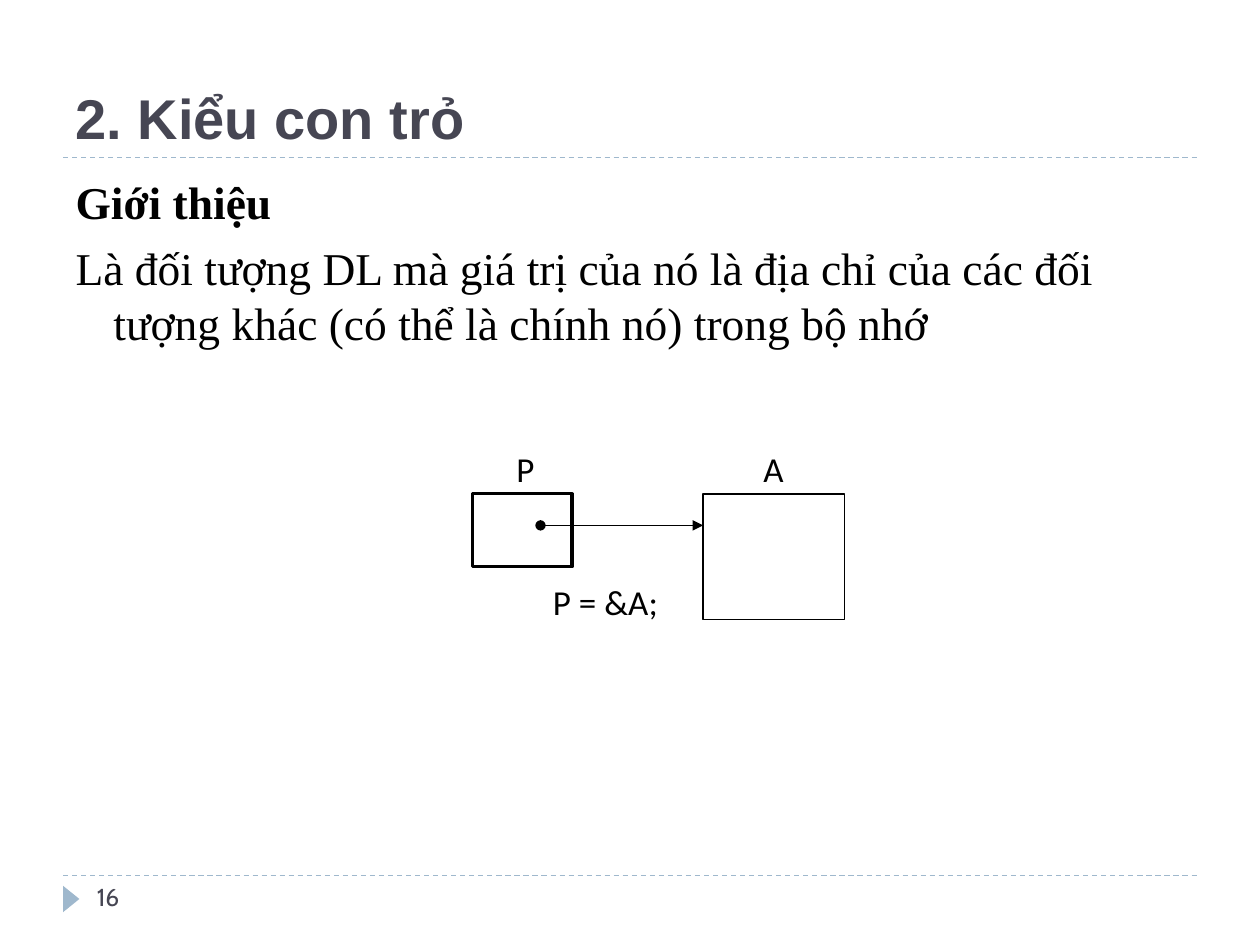
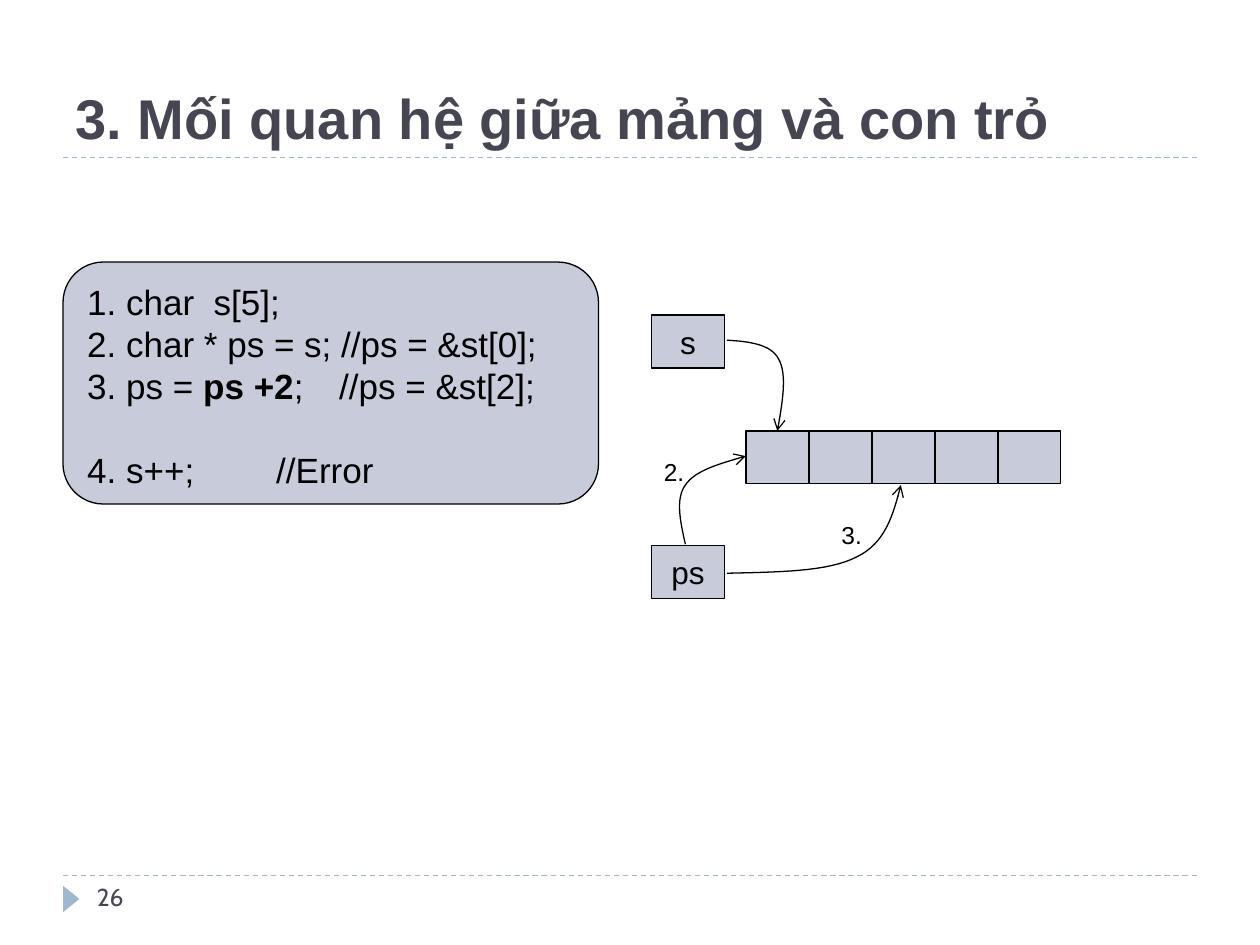
"""Build two slides on pointers and arrays."""
from pptx import Presentation
from pptx.dml.color import RGBColor
from pptx.enum.dml import MSO_LINE
from pptx.enum.shapes import MSO_CONNECTOR, MSO_SHAPE
from pptx.enum.text import MSO_ANCHOR, PP_ALIGN
from pptx.oxml.ns import qn
from pptx.util import Inches, Pt
from lxml.etree import SubElement

BLACK, WHITE, SLATE, BLUE, LILAC = "000000", "FFFFFF", "464653", "9FB8CD", "C7CBDA"
CURVE_STEPS = 16


def rgb(color):
    """Turn a hex string into a colour."""
    return RGBColor.from_string(color)


def style_runs(p, font, size, color=BLACK, bold=False):
    """Format every run of a paragraph."""
    for r in p.runs:
        r.font.name, r.font.size, r.font.bold = font, Pt(size), bold
        r.font.color.rgb = rgb(color)


def add_box(s, x, y, w, h, fill, line=None, width=0.75, kind=MSO_SHAPE.RECTANGLE):
    """Add a filled shape with an optional outline."""
    sp = s.shapes.add_shape(kind, Inches(x), Inches(y), Inches(w), Inches(h))
    sp.shadow.inherit = False
    sp.fill.solid()
    sp.fill.fore_color.rgb = rgb(fill)
    if line:
        sp.line.color.rgb = rgb(line)
        sp.line.width = Pt(width)
    else:
        sp.line.fill.background()
    return sp


def add_line(s, x1, y1, x2, y2, color):
    """Add a thin straight connector without a shadow."""
    cx = s.shapes.add_connector(
        MSO_CONNECTOR.STRAIGHT, Inches(x1), Inches(y1), Inches(x2), Inches(y2))
    cx.line.color.rgb = rgb(color)
    cx.line.width = Pt(0.75)
    SubElement(cx._element.spPr, qn("a:effectLst"))
    return cx


def add_arrowheads(sp, tail, head=None):
    """Put arrowheads on the end and optionally the start of a line."""
    ln = sp.line._get_or_add_ln()
    if head:
        SubElement(ln, qn("a:headEnd"), type=head)
    SubElement(ln, qn("a:tailEnd"), type=tail)


def add_label(s, x, y, w, h, text, font, size, color=BLACK):
    """Add a one-line text box."""
    sp = s.shapes.add_textbox(Inches(x), Inches(y), Inches(w), Inches(h))
    tf = sp.text_frame
    tf.word_wrap = True
    tf.text = text
    style_runs(tf.paragraphs[0], font, size, color)
    return sp


def bezier(points, t):
    """Return the point at t on a cubic curve."""
    weights = ((1 - t) ** 3, 3 * t * (1 - t) ** 2, 3 * t * t * (1 - t), t ** 3)
    return tuple(sum(k * p[axis] for k, p in zip(weights, points)) for axis in (0, 1))


def add_curved_arrow(s, x, y, points):
    """Draw an arrow through joined cubic curves given relative to x, y."""
    points = [(x + dx, y + dy) for dx, dy in points]
    track = [bezier(points[i:i + 4], n / CURVE_STEPS)
             for i in range(0, len(points) - 1, 3)
             for n in range(1, CURVE_STEPS + 1)]
    fb = s.shapes.build_freeform(Inches(points[0][0]), Inches(points[0][1]))
    fb.add_line_segments([(Inches(px), Inches(py)) for px, py in track], close=False)
    sp = fb.convert_to_shape()
    sp.shadow.inherit = False
    sp.fill.background()
    sp.line.color.rgb = rgb(BLACK)
    sp.line.width = Pt(0.75)
    add_arrowheads(sp, "arrow")


def add_base_slide(prs, layout, title, number):
    """Add a slide with the shared title, dashed rules and page mark."""
    s = prs.slides.add_slide(prs.slide_layouts[layout])
    for y in (6.95, 1.25):
        add_line(s, 0.5, y, 9.5, y, BLUE).line.dash_style = MSO_LINE.DASH
    mark = add_box(s, 0.46, 7.07, 0.21, 0.13, BLUE, kind=MSO_SHAPE.ISOSCELES_TRIANGLE)
    mark.rotation = 90
    sp = s.shapes.title
    sp.left, sp.top, sp.width, sp.height = map(Inches, (0.5, 0.17, 9, 1.08))
    tf = sp.text_frame
    tf.text = title
    tf.vertical_anchor = MSO_ANCHOR.BOTTOM
    p = tf.paragraphs[0]
    p.alignment = PP_ALIGN.LEFT
    style_runs(p, "Arial", 32, SLATE, True)
    add_label(s, 0.67, 6.95, 2.17, 0.4, str(number), "Cabin", 14, SLATE)
    return s


def fill_body(s, x, y, w, h, heading, text):
    """Fill the body placeholder with a bold heading and a hanging paragraph."""
    sp = s.placeholders[1]
    sp.left, sp.top, sp.width, sp.height = map(Inches, (x, y, w, h))
    tf = sp.text_frame
    tf.text = f"{heading}\n{text}"
    for i, p in enumerate(tf.paragraphs):
        p.space_before = Pt(6)
        p.line_spacing = Pt(31.5)
        pPr = p._p.get_or_add_pPr()
        pPr.set("marL", str(Inches(0.3)))
        pPr.set("indent", str(Inches(-0.3)))
        SubElement(pPr, qn("a:buNone"))
        style_runs(p, "Times New Roman", 26, bold=i == 0)


def draw_pointer(s, x, y):
    """Draw pointer P aimed at object A."""
    for dx, dy, w, text in ((0.54, 1.06, 1.25, "P = &A;"), (2.21, 0, 0.38, "A"),
                            (0.25, 0, 0.38, "P")):
        sp = add_label(s, x + dx, y + dy, w, 0.44, text, "Calibri", 20)
        sp.fill.solid()
        sp.fill.fore_color.rgb = rgb(WHITE)
    add_box(s, x, y + 0.42, 0.79, 0.58, WHITE, BLACK, 1.75)
    add_box(s, x + 1.83, y + 0.42, 1.12, 1, WHITE, BLACK)
    arrow = add_line(s, x + 0.54, y + 0.67, x + 1.83, y + 0.67, BLACK)
    add_arrowheads(arrow, "triangle", "oval")


def draw_code(s, x, y, w, h):
    """Draw the rounded code panel."""
    lines = (("1. char  s[5];",), ("2. char * ps = s; //ps = &st[0];",),
             ("3. ps = ", "ps +2", ";\t//ps = &st[2];"), ("4. s++;\t\t//Error",))
    sp = add_box(s, x, y, w, h, LILAC, BLACK, kind=MSO_SHAPE.ROUNDED_RECTANGLE)
    tf = sp.text_frame
    tf.word_wrap = True
    tf.vertical_anchor = MSO_ANCHOR.TOP
    for i, parts in enumerate(lines):
        p = tf.add_paragraph() if i else tf.paragraphs[0]
        for part in parts:
            p.add_run().text = part
        p.alignment = PP_ALIGN.LEFT
        p.line_spacing = Pt(24)
        style_runs(p, "Arial", 20)
    tf.paragraphs[2].runs[1].font.bold = True
    tf.paragraphs[3].space_before = Pt(24)


def draw_array(s, x, y):
    """Draw the array cells and the two variables pointing into them."""
    for dy, name in ((0, "s"), (1.83, "ps")):
        tf = add_box(s, x, y + dy, 0.58, 0.42, LILAC, BLACK).text_frame
        tf.text = name
        tf.word_wrap = True
        tf.paragraphs[0].alignment = PP_ALIGN.CENTER
        style_runs(tf.paragraphs[0], "Arial", 18)
    for i in range(5):
        add_box(s, x + 0.75 + 0.5 * i, y + 0.92, 0.5, 0.42, LILAC, BLACK)
    add_curved_arrow(s, x, y, [(0.6, 0.2), (0.77, 0.21), (0.95, 0.23), (1.01, 0.35),
                               (1.08, 0.47), (1.04, 0.7), (1, 0.92)])
    add_curved_arrow(s, x, y, [(0.27, 1.82), (0.23, 1.64), (0.19, 1.46), (0.27, 1.35),
                               (0.35, 1.23), (0.55, 1.18), (0.75, 1.12)])
    add_curved_arrow(s, x, y, [(0.6, 2.05), (1, 2.04), (1.4, 2.04), (1.63, 1.92),
                               (1.86, 1.81), (1.92, 1.58), (1.98, 1.35)])
    for dx, dy, step in ((0, 1.08, "2."), (1.41, 1.58, "3.")):
        add_label(s, x + dx, y + dy, 0.58, 0.34, step, "Arial", 14)


def main():
    """Build and save the slides."""
    prs = Presentation()
    prs.slide_width, prs.slide_height = Inches(10), Inches(7.5)
    s = add_base_slide(prs, 1, "2. Kiểu con trỏ", 16)
    fill_body(s, 0.5, 1.33, 9, 5.4, "Giới thiệu",
              "Là đối tượng DL mà giá trị của nó là địa chỉ của các đối "
              "tượng khác (có thể là chính nó) trong bộ nhớ")
    draw_pointer(s, 3.75, 3.5)
    s = add_base_slide(prs, 5, "3. Mối quan hệ giữa mảng và con trỏ", 26)
    draw_code(s, 0.5, 2.08, 4.25, 1.92)
    draw_array(s, 5.17, 2.5)
    prs.save("out.pptx")


if __name__ == "__main__":
    main()
